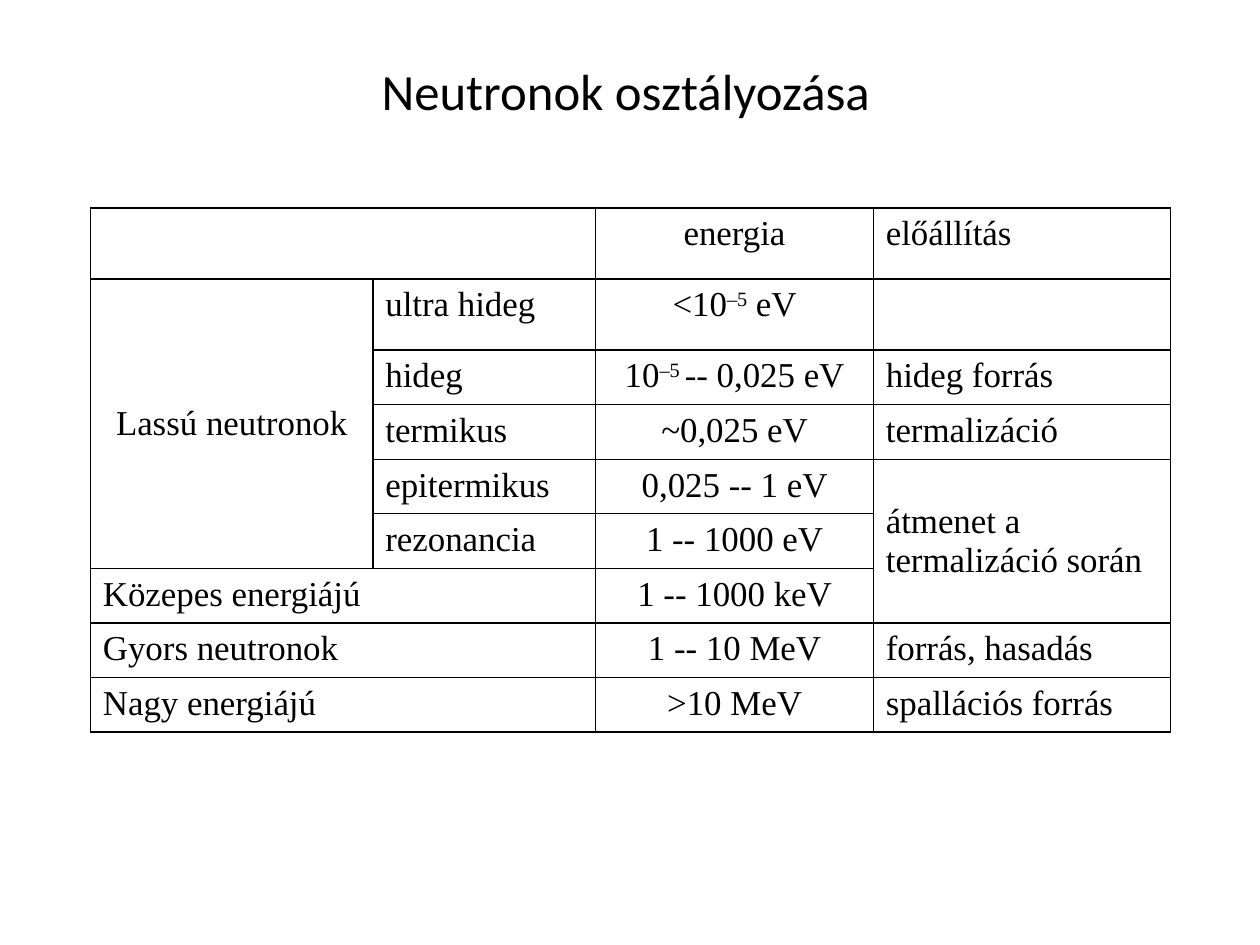
"""Build the slide with the table of neutron energy classes."""
from lxml import etree
from pptx import Presentation
from pptx.dml.color import RGBColor
from pptx.enum.text import MSO_ANCHOR, PP_ALIGN
from pptx.oxml.ns import qn
from pptx.util import Pt

TOP, MIDDLE = MSO_ANCHOR.TOP, MSO_ANCHOR.MIDDLE
LEFT, CENTER, JUSTIFY = PP_ALIGN.LEFT, PP_ALIGN.CENTER, PP_ALIGN.JUSTIFY
COLORS = {"text": "000000", "border": "000000"}
TITLE_FONT = {"name": "Calibri", "size": Pt(32), "bold": False}
CELL_FONT = {"name": "Times New Roman", "size": Pt(22), "bold": False}
MARGINS = {"margin_left": Pt(7.9), "margin_right": Pt(7.9),
           "margin_top": Pt(4.3), "margin_bottom": Pt(4.3)}

COL_WIDTHS = [178, 140.5, 175, 187.5]
ROW_HEIGHTS = [44.8] * 2 + [34.4] * 7
ROWS = [
    ["", "", "energia", "előállítás"],
    ["Lassú neutronok", "ultra hideg", "<10^–5^ eV", ""],
    ["", "hideg", "10^–5 ^-- 0,025 eV", "hideg forrás"],
    ["", "termikus", "~0,025 eV", "termalizáció"],
    ["", "epitermikus", "0,025 -- 1 eV", "átmenet a termalizáció során"],
    ["", "rezonancia", "1 -- 1000 eV", ""],
    ["Közepes energiájú", "", "1 -- 1000 keV", ""],
    ["Gyors neutronok", "", "1 -- 10 MeV", "forrás, hasadás"],
    ["Nagy energiájú", "", ">10 MeV", "spallációs forrás"],
]
MERGES = [((0, 0), (0, 1)), ((1, 0), (5, 0)), ((4, 3), (6, 3)),
          ((6, 0), (6, 1)), ((7, 0), (7, 1)), ((8, 0), (8, 1))]
SPECIAL_ALIGN = {(1, 0): CENTER, (4, 3): LEFT}
MIDDLE_CELLS = [(1, 0), (4, 3)]


def write(p, text, fmt):
    """Add runs to a paragraph, raising the parts between carets."""
    for i, part in enumerate(text.split("^")):
        r = p.add_run()
        r.text = part
        for key, value in fmt.items():
            setattr(r.font, key, value)
        r.font.color.rgb = RGBColor.from_string(COLORS["text"])
        if i % 2:
            r._r.get_or_add_rPr().set("baseline", "30000")


def add_borders(cell):
    """Draw a thin line on each side of a cell."""
    tc_pr = cell._tc.get_or_add_tcPr()
    for i, side in enumerate(("lnL", "lnR", "lnT", "lnB")):
        ln = etree.Element(qn(f"a:{side}"), w=str(Pt(1)))
        fill = etree.SubElement(ln, qn("a:solidFill"))
        etree.SubElement(fill, qn("a:srgbClr"), val=COLORS["border"])
        tc_pr.insert(i, ln)


prs = Presentation()
prs.slide_width, prs.slide_height = Pt(794.16), Pt(595.44)
s = prs.slides.add_slide(prs.slide_layouts[5])

title = s.shapes.title
title.left, title.top, title.width, title.height = Pt(21), Pt(33.5), Pt(747), Pt(60)
tf = title.text_frame
for key, value in MARGINS.items():
    setattr(tf, key, value)
tf.vertical_anchor = TOP
tf.paragraphs[0].alignment = CENTER
write(tf.paragraphs[0], "Neutronok osztályozása", TITLE_FONT)

table = s.shapes.add_table(len(ROWS), len(COL_WIDTHS), Pt(57), Pt(131),
                           Pt(sum(COL_WIDTHS)), Pt(sum(ROW_HEIGHTS))).table
table.first_row = table.horz_banding = False
for col, width in zip(table.columns, COL_WIDTHS):
    col.width = Pt(width)
for row, height in zip(table.rows, ROW_HEIGHTS):
    row.height = Pt(height)
for start, end in MERGES:
    table.cell(*start).merge(table.cell(*end))

for i, texts in enumerate(ROWS):
    for j, text in enumerate(texts):
        cell = table.cell(i, j)
        cell.fill.background()
        add_borders(cell)
        for key, value in MARGINS.items():
            setattr(cell, key, value)
        cell.vertical_anchor = MIDDLE if (i, j) in MIDDLE_CELLS else TOP
        if text:
            p = cell.text_frame.paragraphs[0]
            p.alignment = SPECIAL_ALIGN.get((i, j), CENTER if j == 2 else JUSTIFY)
            write(p, text, CELL_FONT)

prs.save("out.pptx")
